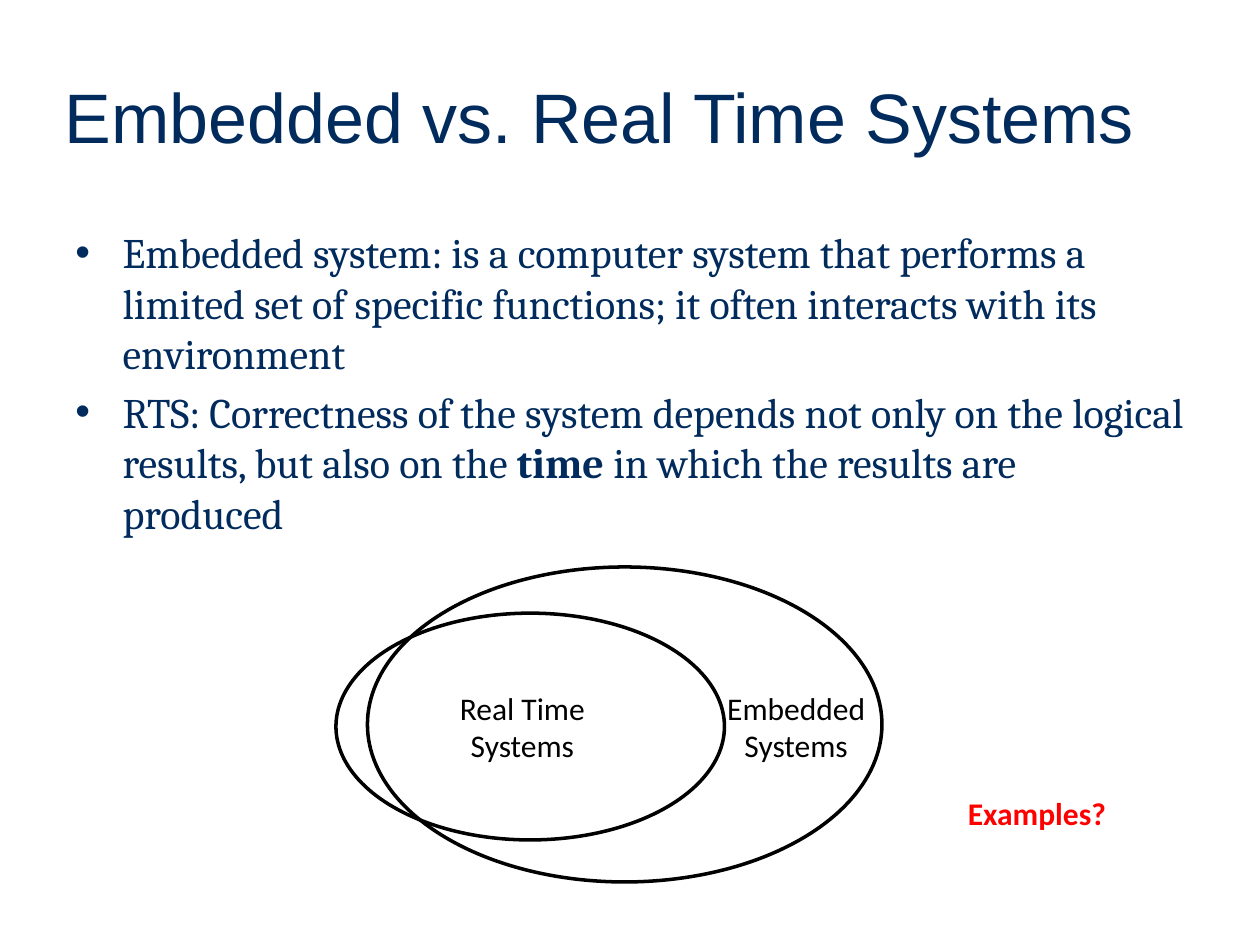
import pptx
import pptx.dml.color
import pptx.enum.shapes
import pptx.enum.text
import pptx.oxml.ns
import pptx.util
from lxml import etree

Pt = pptx.util.Pt
ALIGN = pptx.enum.text.PP_ALIGN
ANCHOR = pptx.enum.text.MSO_ANCHOR
NAVY = pptx.dml.color.RGBColor(0x00, 0x2B, 0x5C)
BLACK = pptx.dml.color.RGBColor(0x00, 0x00, 0x00)
RED = pptx.dml.color.RGBColor(0xFF, 0x00, 0x00)


class SlideBuilder:
    heading_font, body_font, label_font = "Arial", "Cambria", "Calibri"
    heading_size, body_size, label_size = Pt(40), Pt(24), Pt(18)
    bullet_indent = Pt(27)
    outline_width = Pt(2)

    def __init__(self, slide):
        self.slide = slide

    def set_font(self, paragraph, name, size, color, bold=None):
        font = paragraph.font
        font.name, font.size, font.bold = name, size, bold
        font.color.rgb = color

    def title(self, text, box):
        frame = self.slide.shapes.add_textbox(*map(Pt, box)).text_frame
        frame.word_wrap = True
        frame.vertical_anchor = ANCHOR.MIDDLE
        frame.text = text
        self.set_font(frame.paragraphs[0], self.heading_font, self.heading_size, NAVY)

    def bullets(self, items, box):
        """Each item is a list of (text, bold) pieces."""
        frame = self.slide.shapes.add_textbox(*map(Pt, box)).text_frame
        frame.word_wrap = True
        for index, pieces in enumerate(items):
            paragraph = frame.add_paragraph() if index else frame.paragraphs[0]
            if index:
                paragraph.space_before = Pt(4.8)
            self.add_bullet(paragraph)
            self.set_font(paragraph, self.body_font, self.body_size, NAVY)
            for text, bold in pieces:
                run = paragraph.add_run()
                run.text = text
                if bold:
                    run.font.bold = True

    def add_bullet(self, paragraph):
        properties = paragraph._p.get_or_add_pPr()
        properties.set("marL", str(self.bullet_indent))
        properties.set("indent", str(-self.bullet_indent))
        qn = pptx.oxml.ns.qn
        etree.SubElement(properties, qn("a:buFont")).set("typeface", "Arial")
        etree.SubElement(properties, qn("a:buChar")).set("char", "•")

    def ellipse(self, parent, box):
        oval = parent.shapes.add_shape(
            pptx.enum.shapes.MSO_SHAPE.OVAL, *map(Pt, box))
        oval.shadow.inherit = False
        oval.fill.background()
        oval.line.color.rgb = BLACK
        oval.line.width = self.outline_width

    def label(self, parent, lines, box, color=BLACK, bold=None, align=ALIGN.CENTER):
        frame = parent.shapes.add_textbox(*map(Pt, box)).text_frame
        frame.word_wrap = False
        frame.auto_size = pptx.enum.text.MSO_AUTO_SIZE.SHAPE_TO_FIT_TEXT
        frame.text = "\n".join(lines)
        for paragraph in frame.paragraphs:
            paragraph.alignment = align
            self.set_font(paragraph, self.label_font, self.label_size, color, bold)


def main():
    presentation = pptx.Presentation()
    presentation.slide_width, presentation.slide_height = Pt(720), Pt(540)
    slide = presentation.slides.add_slide(presentation.slide_layouts[6])
    builder = SlideBuilder(slide)

    builder.title("Embedded vs. Real Time Systems", (30, 30, 654, 72))
    builder.bullets([
        [("Embedded system: is a computer system that performs a limited set of "
          "specific functions; it often interacts with its environment", False)],
        [("RTS: Correctness of the system depends not only on the logical results, "
          "but also on the ", False),
         ("time", True),
         (" in which the results are produced", False)],
    ], (36, 126, 648, 192))

    venn = slide.shapes.add_group_shape()
    builder.ellipse(venn, (192, 350.4, 222, 129.6))
    builder.ellipse(venn, (210, 324, 294, 180))
    builder.label(venn, ["Embedded", "Systems"], (408, 390, 94, 51))
    builder.label(venn, ["Real Time", "Systems"], (255, 390, 87, 51))

    builder.label(slide, ["Examples?"], (546, 450, 94, 29), RED, True, ALIGN.LEFT)
    presentation.save("out.pptx")


if __name__ == "__main__":
    main()
